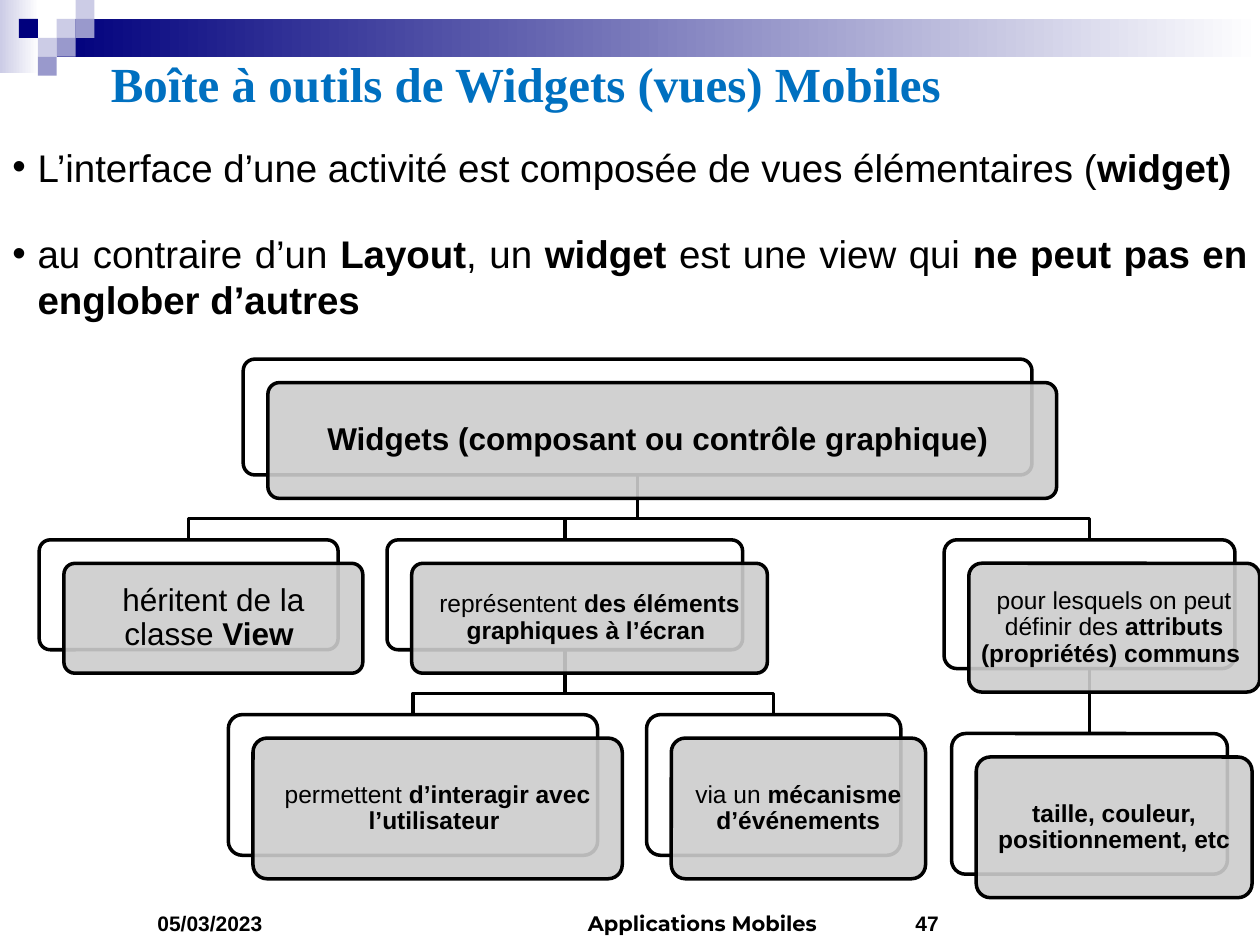
from dataclasses import dataclass
from lxml.etree import SubElement
from pptx import Presentation
from pptx.dml.color import RGBColor
from pptx.enum.shapes import MSO_CONNECTOR, MSO_SHAPE
from pptx.enum.text import MSO_ANCHOR, PP_ALIGN
from pptx.oxml.ns import qn
from pptx.util import Pt


@dataclass(frozen=True)
class Theme:
    ink: str = "000000"
    title: str = "0070C0"
    navy: str = "00007D"
    mauve: str = "9999CC"
    pale: str = "CCCCE6"
    white: str = "FFFFFF"
    panel: str = "CCCCCC"
    sans: str = "Arial"
    serif: str = "Times New Roman"
    brand: str = "Montserrat"
    head: int = 28
    body: int = 22
    large: int = 18
    small: int = 14
    foot: int = 12


T = Theme()
LEFT, MID, RIGHT, FULL = PP_ALIGN.LEFT, PP_ALIGN.CENTER, PP_ALIGN.RIGHT, PP_ALIGN.JUSTIFY

TITLE = "Boîte à outils de Widgets (vues) Mobiles"
POINTS = [
    [("L’interface d’une activité est composée de vues élémentaires (", False), ("widget)", True)],
    [("au contraire d’un ", False), ("Layout", True), (", un ", False), ("widget", True),
     (" est une view qui ", False), ("ne peut pas en englober d’autres", True)],
]
FOOT = [
    ("05/03/2023", 36, 168, MID, T.sans),
    ("47", 516, 168, LEFT, T.sans),
    ("Applications Mobiles", 246, 228, RIGHT, T.brand),
]
BANDS = [(0, 0, 22.3, 41.8, T.pale), (32.4, 10.8, 687.6, 21.6, T.navy)]
TILES = [(3, 1, T.pale), (4, 0, T.pale), (4, 1, T.mauve), (2, 2, T.pale),
         (1, 1, T.navy), (3, 2, T.mauve), (2, 3, T.mauve)]
NODES = [
    ("root", None, 139, 450.7, 66.2, T.large,
     [("Widgets (composant ou contrôle graphique) ", True)]),
    ("view", "root", 22.4, 170.8, 62.8, T.large,
     [("héritent de la classe ", False), ("View ", True)]),
    ("screen", "root", 221.2, 203.2, 62.8, T.small,
     [("représentent ", False), ("des éléments graphiques à l’écran ", True)]),
    ("user", "screen", 130.5, 211, 80.4, T.small,
     [("permettent ", False), ("d’interagir avec l’utilisateur ", True)]),
    ("event", "screen", 369.5, 145.3, 80.4, T.small,
     [("via un ", False), ("mécanisme d’événements", True)]),
    ("traits", "root", 539.5, 166.2, 73.6, T.small,
     [("pour lesquels on peut définir des ", False), ("attributs (propriétés) communs ", True)]),
    ("size", "traits", 543.8, 157.6, 80.4, T.small,
     [("taille, couleur, positionnement, etc", True)]),
]
TILE, TOP, GAP, BEND = 10.8, 205.2, 37.1, 25
SHIFT_X, SHIFT_Y = 14.1, 13.4

deck = Presentation()
deck.slide_width, deck.slide_height = Pt(720), Pt(540)
slide = deck.slides.add_slide(deck.slide_layouts[6])
shapes = slide.shapes


def rgb(code):
    return RGBColor.from_string(code)


def block(kind, x, y, w, h, fill, line=False):
    item = shapes.add_shape(kind, Pt(x), Pt(y), Pt(w), Pt(h))
    item.shadow.inherit = False
    item.fill.solid()
    item.fill.fore_color.rgb = rgb(fill)
    if line:
        stroke(item)
    else:
        item.line.fill.background()
    return item


def stroke(item):
    item.line.color.rgb = rgb(T.ink)
    item.line.width = Pt(2)


def write(para, runs, size, face=T.sans, color=T.ink, align=LEFT):
    para.alignment = align
    font = para.font
    font.size, font.name, font.color.rgb = Pt(size), face, rgb(color)
    bolds = {bold for _, bold in runs}
    if len(bolds) == 1:
        font.bold = bolds.pop()
    for text, bold in runs:
        run = para.add_run()
        run.text = text
        if font.bold is None:
            run.font.bold = bold


def label(x, y, w, h, anchor):
    frame = shapes.add_textbox(Pt(x), Pt(y), Pt(w), Pt(h)).text_frame
    frame.word_wrap = True
    frame.vertical_anchor = anchor
    return frame


def bullet(para):
    props = para._p.get_or_add_pPr()
    props.set("marL", str(Pt(14.4)))
    props.set("indent", str(-Pt(14.4)))
    SubElement(props, qn("a:buFont")).set("typeface", T.sans)
    SubElement(props, qn("a:buChar")).set("char", "•")


for x, y, w, h, color in BANDS:
    fill = block(MSO_SHAPE.RECTANGLE, x, y, w, h, color).fill
    fill.gradient()
    fill.gradient_angle = 0
    for stop, place, shade in zip(fill.gradient_stops, (0, 1), (color, T.white)):
        stop.position, stop.color.rgb = place, rgb(shade)
for col, row, color in TILES:
    block(MSO_SHAPE.RECTANGLE, col * TILE, row * TILE, TILE, TILE, color)

write(label(56.2, 16.6, 663.8, 61.9, MSO_ANCHOR.MIDDLE).paragraphs[0],
      [(TITLE, True)], T.head, T.serif, T.title)
for text, x, w, align, face in FOOT:
    write(label(x, 501.1, w, 37.4, MSO_ANCHOR.BOTTOM).paragraphs[0],
          [(text, True)], T.foot, face, align=align)

body = label(0, 78.5, 720, 141.8, MSO_ANCHOR.TOP)
for i, runs in enumerate(POINTS):
    para = body.add_paragraph() if i else body.paragraphs[0]
    write(para, runs, T.body, align=FULL)
    if i:
        para.space_before = Pt(23)
    bullet(para)

spots, joins = {}, []
for name, above, x, w, h, *_ in NODES:
    mid = x + w / 2
    if above is None:
        spots[name] = mid, TOP, TOP + h
        continue
    start, _, base = spots[above]
    top = base + GAP
    spots[name] = mid, top, top + h
    if abs(mid - start) < 0.1:
        link = shapes.add_connector(MSO_CONNECTOR.STRAIGHT, Pt(start), Pt(base), Pt(mid), Pt(top))
        SubElement(link._element.spPr, qn("a:effectLst"))
        joins.append((link, above, name))
    else:
        bend = base + BEND
        trace = shapes.build_freeform(Pt(start), Pt(base))
        trace.add_line_segments([(Pt(start), Pt(bend)), (Pt(mid), Pt(bend)), (Pt(mid), Pt(top))],
                                close=False)
        link = trace.convert_to_shape()
        link.shadow.inherit = False
        link.fill.background()
    stroke(link)

cards = {}
for name, _, x, w, h, size, runs in NODES:
    top = spots[name][1]
    back = cards[name] = block(MSO_SHAPE.ROUNDED_RECTANGLE, x, top, w, h, T.white, True)
    front = block(MSO_SHAPE.ROUNDED_RECTANGLE, x + SHIFT_X, top + SHIFT_Y, w, h, T.panel, True)
    back.adjustments[0] = front.adjustments[0] = 0.1
    SubElement(front._element.find(".//" + qn("a:srgbClr")), qn("a:alpha")).set("val", "90000")
    frame = front.text_frame
    frame.word_wrap = True
    frame.vertical_anchor = MSO_ANCHOR.MIDDLE
    pad = Pt(5 if size == T.large else 4.2)
    frame.margin_left = frame.margin_right = frame.margin_top = frame.margin_bottom = pad
    write(frame.paragraphs[0], runs, size, align=MID)
    frame.paragraphs[0].line_spacing = 0.9

for link, above, name in joins:
    link.begin_connect(cards[above], 2)
    link.end_connect(cards[name], 0)

deck.save("out.pptx")
